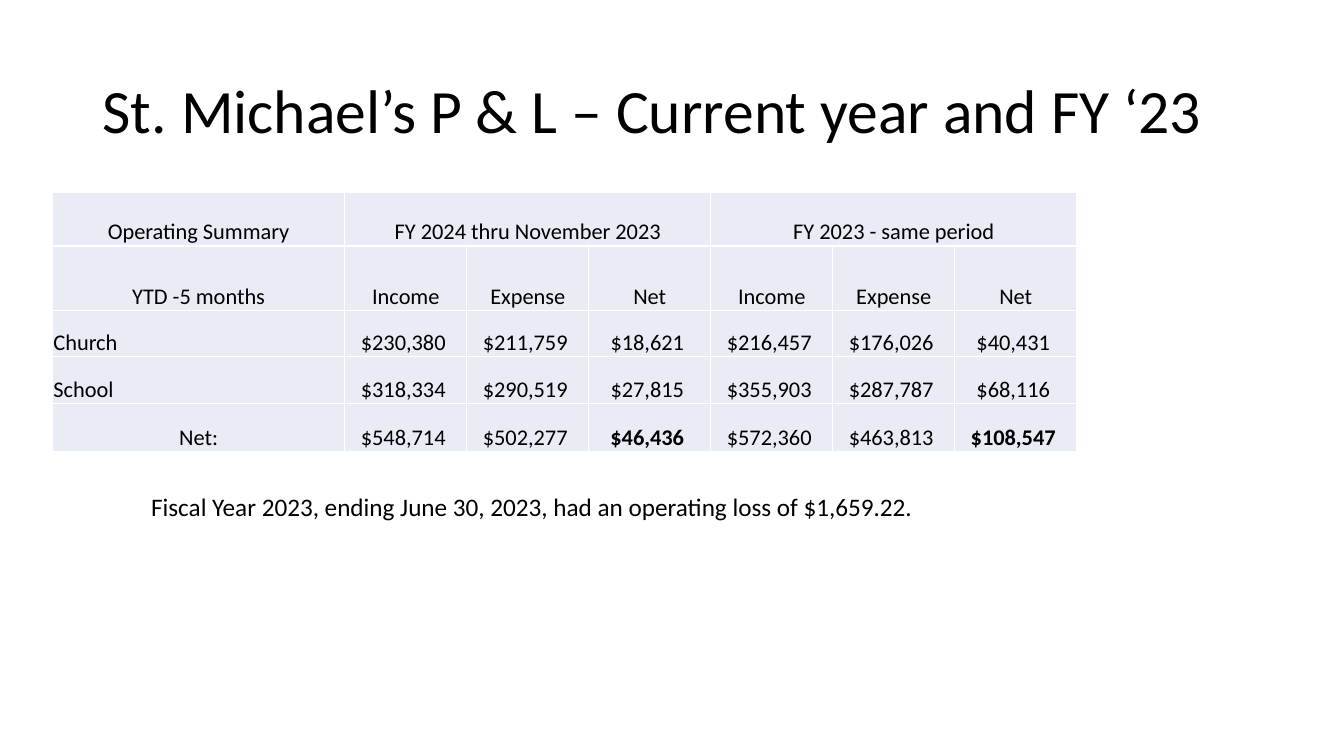
from dataclasses import dataclass

from lxml.etree import SubElement
from pptx import Presentation
from pptx.dml.color import RGBColor
from pptx.enum.text import MSO_ANCHOR as Anchor, MSO_AUTO_SIZE as AutoSize, PP_ALIGN as Align
from pptx.oxml.ns import qn
from pptx.util import Inches, Pt


@dataclass(frozen=True)
class Theme:
    font: str = "Calibri"
    text: str = "000000"
    cell: str = "E9EBF5"
    border: str = "FFFFFF"
    title_size: int = 44
    table_size: int = 16
    note_size: int = 18


theme = Theme()


def format_text(paragraph, size, bold=False):
    for run in paragraph.runs:
        run.font.name = theme.font
        run.font.size = Pt(size)
        run.font.bold = bold
        run.font.color.rgb = RGBColor.from_string(theme.text)


def add_text(slide, box, text, size):
    shape = slide.shapes.add_textbox(*map(Inches, box))
    text_frame = shape.text_frame
    text_frame.word_wrap = True
    text_frame.text = text
    format_text(text_frame.paragraphs[0], size)
    return text_frame


presentation = Presentation()
presentation.slide_width = Inches(13.33)
presentation.slide_height = Inches(7.5)
slide = presentation.slides.add_slide(presentation.slide_layouts[6])

# Title
title = add_text(slide, (0.92, 0.4, 11.5, 1.45),
                 "St. Michael’s P & L – Current year and FY ‘23", theme.title_size)
title.vertical_anchor = Anchor.MIDDLE
title.paragraphs[0].line_spacing = 0.9

# Operating summary: a label column and two periods of three columns each
period_columns = ["Income", "Expense", "Net"]
rows = [
    ["Operating Summary", "FY 2024 thru November 2023", "", "", "FY 2023 - same period", "", ""],
    ["YTD -5 months"] + period_columns * 2,
    ["Church", "$230,380 ", "$211,759 ", "$18,621 ", "$216,457 ", "$176,026 ", "$40,431 "],
    ["School", "$318,334 ", "$290,519 ", "$27,815 ", "$355,903 ", "$287,787 ", "$68,116 "],
    ["Net:", "$548,714 ", "$502,277 ", "$46,436 ", "$572,360 ", "$463,813 ", "$108,547 "],
]
column_widths = [2.9] + [1.21] * 6
row_heights = [0.53, 0.64, 0.46, 0.46, 0.48]
period_starts = (1, 4)
net_columns = (3, 6)
left_labels = ("Church", "School")

table = slide.shapes.add_table(
    len(rows), len(column_widths), Inches(0.52), Inches(1.91),
    Inches(sum(column_widths)), Inches(sum(row_heights))).table
for column, width in zip(table.columns, column_widths):
    column.width = Inches(width)
for row, height in zip(table.rows, row_heights):
    row.height = Inches(height)
for start in period_starts:
    table.cell(0, start).merge(table.cell(0, start + len(period_columns) - 1))

for row_index, row_texts in enumerate(rows):
    for column_index, text in enumerate(row_texts):
        cell = table.cell(row_index, column_index)
        cell.margin_left = cell.margin_right = cell.margin_top = Inches(0.01)
        cell.margin_bottom = 0
        cell.vertical_anchor = Anchor.BOTTOM

        # Borders come before the fill in the cell properties
        properties = cell._tc.get_or_add_tcPr()
        for side in ("a:lnL", "a:lnR", "a:lnT", "a:lnB"):
            line = SubElement(properties, qn(side), w=str(Pt(1)))
            SubElement(SubElement(line, qn("a:solidFill")), qn("a:srgbClr"), val=theme.border)
        cell.fill.solid()
        cell.fill.fore_color.rgb = RGBColor.from_string(theme.cell)

        if text:
            cell.text_frame.text = text
            paragraph = cell.text_frame.paragraphs[0]
            paragraph.alignment = Align.LEFT if text in left_labels else Align.CENTER
            is_net_total = row_index == len(rows) - 1 and column_index in net_columns
            format_text(paragraph, theme.table_size, bold=is_net_total)

# Note under the table
note = add_text(slide, (1.4, 4.83, 9.8, 0.4),
                "Fiscal Year 2023, ending June 30, 2023, had an operating loss of $1,659.22.",
                theme.note_size)
note.auto_size = AutoSize.SHAPE_TO_FIT_TEXT

presentation.save("out.pptx")
